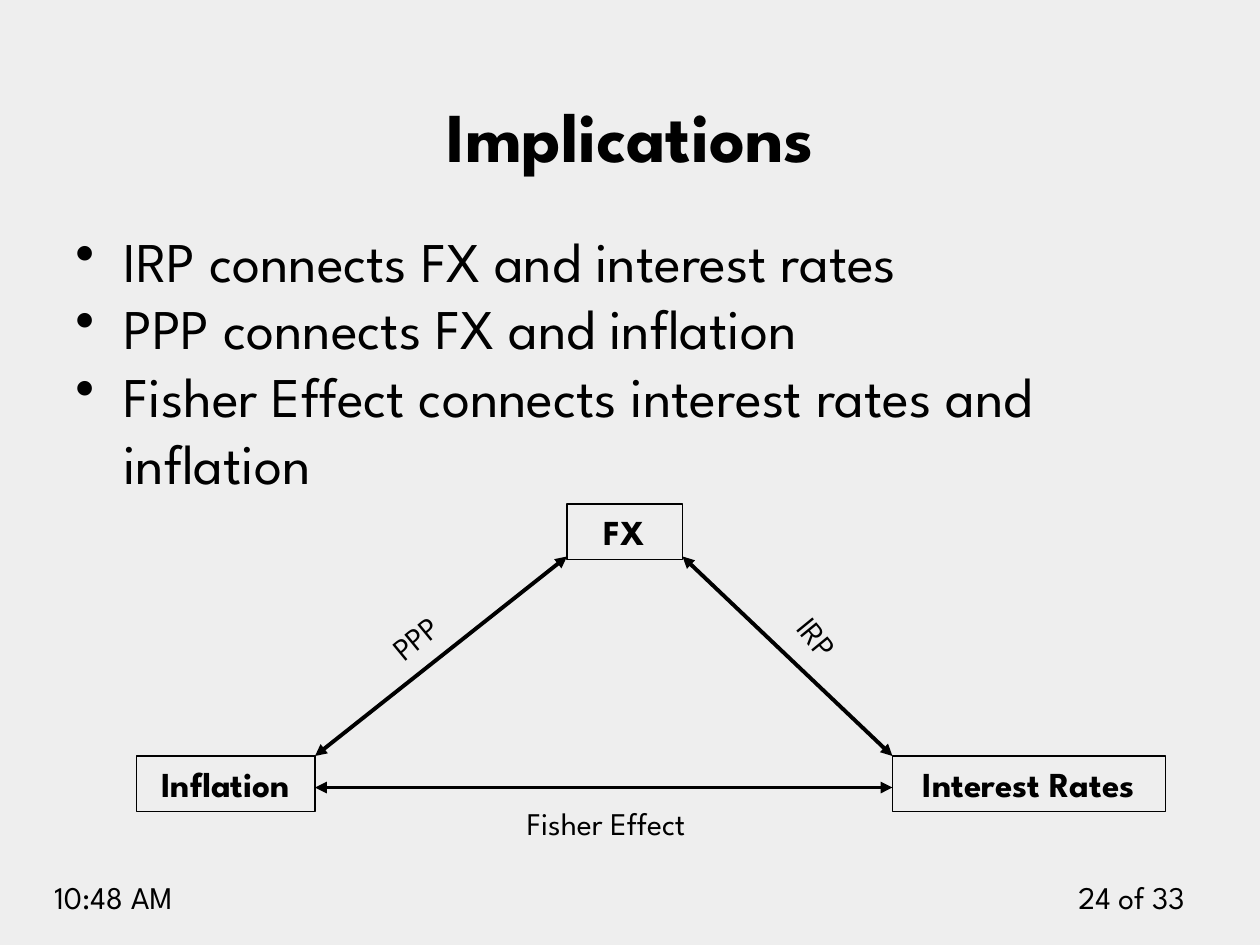
from lxml.etree import SubElement
from pptx import Presentation
from pptx.dml.color import RGBColor
from pptx.enum.shapes import MSO_CONNECTOR, MSO_SHAPE
from pptx.enum.text import MSO_ANCHOR, MSO_AUTO_SIZE, PP_ALIGN
from pptx.oxml.ns import qn
from pptx.util import Inches, Pt

COLORS = {"back": "EEEEEE", "ink": "000000"}
INK = RGBColor.from_string(COLORS["ink"])
FONT = "League Spartan"

deck = Presentation()
deck.slide_width, deck.slide_height = Inches(10), Inches(7.5)
slide = deck.slides.add_slide(deck.slide_layouts[5])
slide.background.fill.solid()
slide.background.fill.fore_color.rgb = RGBColor.from_string(COLORS["back"])
shapes = slide.shapes


def grid(*cells):
    """Turn cells of a 120 by 90 grid into lengths."""
    return [int(deck.slide_width * cell / 120) for cell in cells]


def write(shape, lines, size, align=PP_ALIGN.LEFT, bold=False, bullet=False):
    frame = shape.text_frame
    frame.word_wrap = True
    frame.auto_size = MSO_AUTO_SIZE.NONE
    for i, line in enumerate(lines):
        para = frame.paragraphs[0] if i == 0 else frame.add_paragraph()
        para.alignment = align
        if bullet:
            props = para._p.get_or_add_pPr()
            props.set("marL", str(Inches(0.38)))
            props.set("indent", str(-Inches(0.38)))
            SubElement(props, qn("a:buChar"), char="•")
        run = para.add_run()
        run.text = line
        run.font.name, run.font.size = FONT, Pt(size)
        run.font.bold, run.font.color.rgb = bold, INK


# Title and bullets
title = shapes.title
title.left, title.top, title.width, title.height = grid(6, 2.4, 108, 15)
write(title, ["Implications"], 40, PP_ALIGN.CENTER, bold=True)
title.text_frame.vertical_anchor = MSO_ANCHOR.BOTTOM

points = [
    "IRP connects FX and interest rates",
    "PPP connects FX and inflation",
    "Fisher Effect connects interest rates and inflation",
]
body = shapes.add_textbox(*grid(6, 21, 108, 59.4))
write(body, points, 32, bullet=True)

# Footer and arrow labels: text, left, top, width, turn, alignment
labels = [
    ("24 of 33", 100, 83, 14, 0, PP_ALIGN.RIGHT),
    ("10:48 AM", 4, 83, 19, 0, PP_ALIGN.LEFT),
    ("PPP", 35.6, 57.1, 10.8, 320.5, PP_ALIGN.LEFT),
    ("IRP", 73.9, 60.1, 11, 50.7, PP_ALIGN.LEFT),
    ("Fisher Effect", 49, 76, 20, 0, PP_ALIGN.LEFT),
]
for text, left, top, width, turn, align in labels:
    label = shapes.add_textbox(*grid(left, top, width, 4.8))
    label.rotation = turn
    write(label, [text], 18, align)

# Corners of the triangle: text, left, top, width
nodes = [("FX", 54, 48, 11), ("Inflation", 13, 72, 17), ("Interest Rates", 85, 72, 26)]
for text, left, top, width in nodes:
    node = shapes.add_shape(MSO_SHAPE.RECTANGLE, *grid(left, top, width, 5.3))
    node.shadow.inherit = False
    node.fill.background()
    node.line.color.rgb, node.line.width = INK, Pt(0.75)
    node.text_frame.vertical_anchor = MSO_ANCHOR.TOP
    write(node, [text], 20, PP_ALIGN.CENTER, bold=True)

# Sides of the triangle: start and end points
sides = [(30, 72, 54, 53), (65, 53, 85, 72), (85, 75, 30, 75)]
for side in sides:
    arrow = shapes.add_connector(MSO_CONNECTOR.STRAIGHT, *grid(*side))
    arrow.line.color.rgb, arrow.line.width = INK, Pt(2.25)
    for end in ("a:headEnd", "a:tailEnd"):
        SubElement(arrow.line._get_or_add_ln(), qn(end), type="triangle")
    SubElement(arrow._element.spPr, qn("a:effectLst"))

deck.save("out.pptx")
